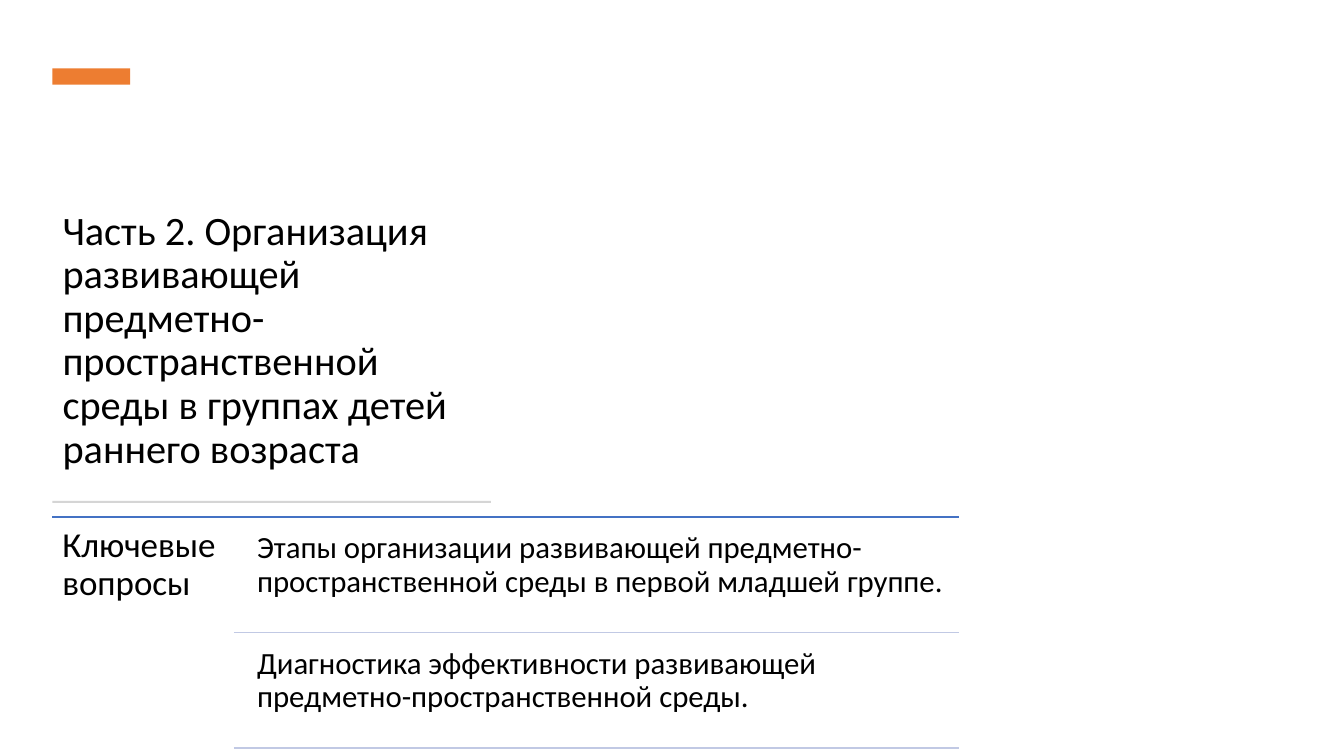
from dataclasses import dataclass

from lxml.etree import SubElement
from pptx import Presentation
from pptx.dml.color import RGBColor
from pptx.enum.shapes import MSO_CONNECTOR, MSO_SHAPE
from pptx.enum.text import MSO_ANCHOR, MSO_AUTO_SIZE, PP_ALIGN
from pptx.oxml.ns import qn
from pptx.util import Inches, Pt


@dataclass(frozen=True)
class Theme:
    font: str = "Calibri"
    text: str = "000000"
    accent: str = "ED7D31"
    divider: str = "D5D5D5"
    top_rule: str = "4472C4"
    row_rule: str = "C1C9E4"
    title_size: float = 28.8
    heading_size: float = 25
    question_size: float = 22


THEME = Theme()
TITLE = ("Часть 2. Организация развивающей предметно-пространственной "
         "среды в группах детей раннего возраста")
HEADING = "Ключевые вопросы"
QUESTIONS = [
    "Этапы организации развивающей предметно-пространственной среды "
    "в первой младшей группе.",
    "Диагностика эффективности развивающей предметно-пространственной среды.",
]


def write(frame, text, size, anchor=MSO_ANCHOR.TOP):
    frame.text = text
    frame.word_wrap = True
    frame.auto_size = MSO_AUTO_SIZE.NONE
    frame.vertical_anchor = anchor
    paragraph = frame.paragraphs[0]
    paragraph.alignment = PP_ALIGN.LEFT
    paragraph.line_spacing = 0.9
    font = paragraph.runs[0].font
    font.name = THEME.font
    font.size = Pt(size)
    font.color.rgb = RGBColor.from_string(THEME.text)


def add_text(slide, left, top, width, height, text, size, inset):
    frame = slide.shapes.add_textbox(
        Inches(left), Inches(top), Inches(width), Inches(height)).text_frame
    frame.margin_left = frame.margin_right = Inches(inset)
    frame.margin_top = frame.margin_bottom = Inches(inset)
    write(frame, text, size)


def add_bar(slide, left, top, width, height, color):
    bar = slide.shapes.add_shape(
        MSO_SHAPE.RECTANGLE, Inches(left), Inches(top), Inches(width), Inches(height))
    bar.shadow.inherit = False
    bar.fill.solid()
    bar.fill.fore_color.rgb = RGBColor.from_string(color)
    bar.line.fill.background()


def add_rule(slide, left, right, y, color):
    rule = slide.shapes.add_connector(
        MSO_CONNECTOR.STRAIGHT, Inches(left), Inches(y), Inches(right), Inches(y))
    rule.line.color.rgb = RGBColor.from_string(color)
    rule.line.width = Pt(1)
    SubElement(rule._element.spPr, qn("a:effectLst"))


def add_title_block(slide, left, top, width, height):
    """Place the title between the accent bar above and the divider below."""
    title = slide.shapes.title
    title.left, title.top = Inches(left), Inches(top)
    title.width, title.height = Inches(width), Inches(height)
    write(title.text_frame, TITLE, THEME.title_size, MSO_ANCHOR.BOTTOM)
    add_bar(slide, left, top - 0.55, 0.77, 0.16, THEME.accent)
    add_bar(slide, left, top + height + 0.24, width - 0.05, 0.02, THEME.divider)


def add_questions(slide, left, top, width, height):
    """Place the heading in a left column and one ruled row per question beside it."""
    right = left + width
    heading_width, indent, gap = 1.8, 0.14, 0.06
    column = left + heading_width
    pitch = height / len(QUESTIONS)
    add_rule(slide, left, right, top, THEME.top_rule)
    add_text(slide, left, top, heading_width, height, HEADING, THEME.heading_size, 0.1)
    for row, question in enumerate(QUESTIONS):
        row_top = top + row * pitch
        add_text(slide, column + indent, row_top + gap, right - column - indent,
                 pitch - gap, question, THEME.question_size, 0.09)
        add_rule(slide, column, right, row_top + pitch, THEME.row_rule)


def main():
    presentation = Presentation()
    presentation.slide_width = Inches(13.33)
    presentation.slide_height = Inches(7.5)
    slide = presentation.slides.add_slide(presentation.slide_layouts[5])
    add_title_block(slide, 0.52, 1.23, 4.4, 3.5)
    add_questions(slide, 0.52, 5.13, 8.99, 2.29)
    presentation.save("out.pptx")


if __name__ == "__main__":
    main()
